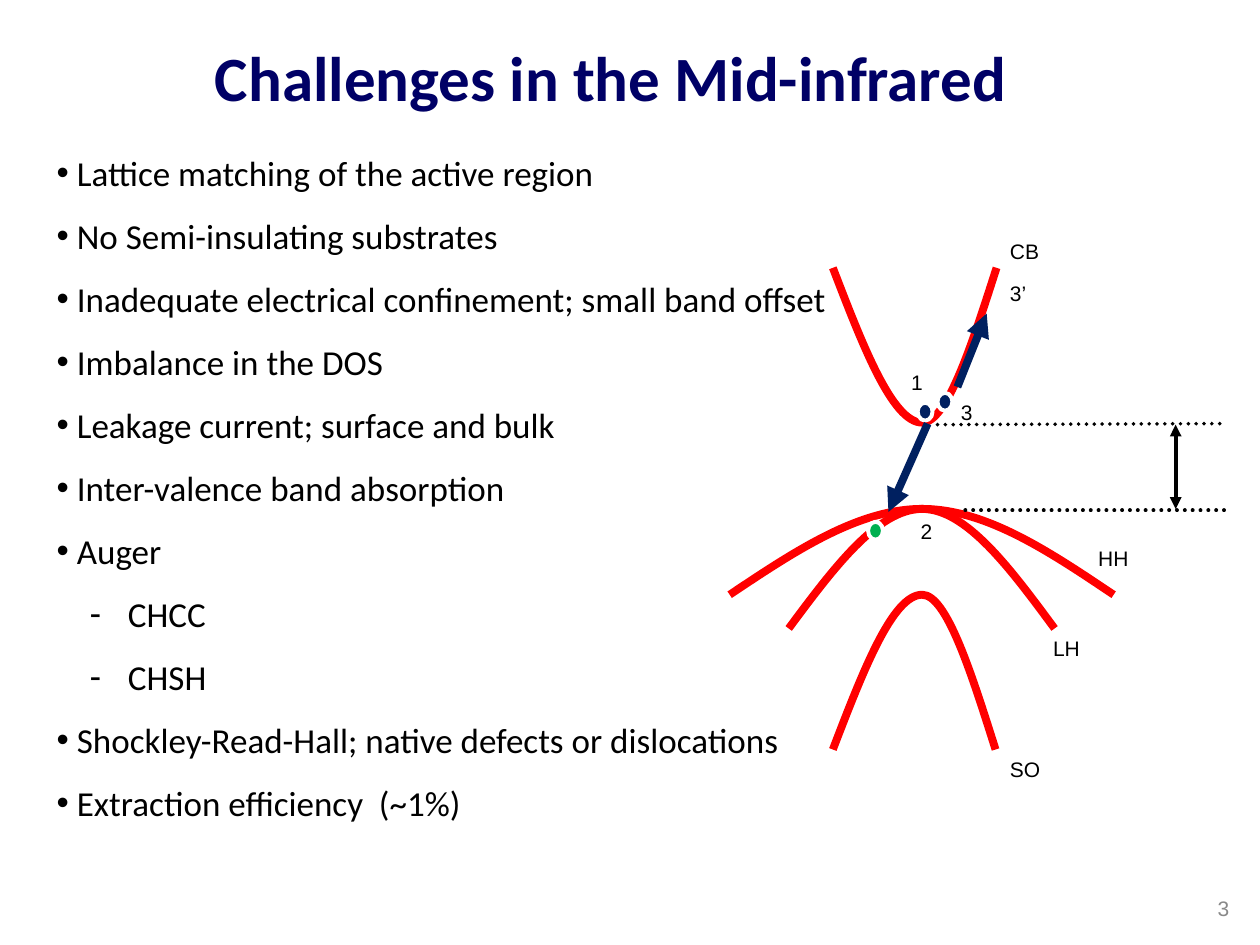
from typing import NamedTuple

from lxml import etree
from pptx import Presentation
from pptx import util as u
from pptx.dml.color import RGBColor
from pptx.enum import dml, shapes, text
from pptx.oxml.ns import qn


class Theme:
    navy = RGBColor(0, 0, 0x66)
    blue = RGBColor(0, 0x20, 0x60)
    red = RGBColor(0xFF, 0, 0)
    green = RGBColor(0, 0xB0, 0x50)
    black = RGBColor(0, 0, 0)
    gray = RGBColor(0x89, 0x89, 0x89)
    white = RGBColor(0xFF, 0xFF, 0xFF)
    head, body, small = u.Pt(36), u.Pt(20), u.Pt(12)
    thick, thin = u.Pt(4.5), u.Pt(2.25)
    main, label = "Calibri", "Arial"


# All lengths below are in centimetres
class Item(NamedTuple):
    words: str
    sub: bool = False


class Label(NamedTuple):
    words: str
    x: float
    y: float
    w: float = 1.5
    h: float = 1.04


class Band(NamedTuple):
    left: float
    right: float
    end: float   # height of both ends
    apex: float  # height of the turning point


class Dot(NamedTuple):
    x: float
    y: float
    color: RGBColor


class Line(NamedTuple):
    x1: float
    y1: float
    x2: float
    y2: float
    color: RGBColor = Theme.black
    width: int = Theme.thin
    dots: bool = False
    ends: tuple = ()


ITEMS = [
    Item("Lattice matching of the active region"),
    Item("No Semi-insulating substrates"),
    Item("Inadequate electrical confinement; small band offset"),
    Item("Imbalance in the DOS"),
    Item("Leakage current; surface and bulk"),
    Item("Inter-valence band absorption"),
    Item("Auger"),
    Item("CHCC", True),
    Item("CHSH", True),
    Item("Shockley-Read-Hall; native defects or dislocations"),
    Item("Extraction efficiency  (~1%)"),
]
LABELS = [
    Label("2", 18.31, 10.33, 1.12, 1.12), Label("1", 18.12, 7.32, 0.89, 0.69),
    Label("CB", 20.11, 4.69), Label("LH", 20.98, 12.69),
    Label("HH", 21.89, 10.87, 1.57), Label("SO", 20.11, 15.13),
    Label("3", 19.12, 7.92, 1.12, 1.12), Label("3’", 20.11, 5.54, 1.12, 1.12),
]
MID = 18.59  # shared axis of the bands
BANDS = [
    Band(16.79, 20.07, 15.11, 11.99),  # SO
    Band(16.79, 20.09, 5.4, 8.52),     # CB
    Band(14.71, 22.45, 11.99, 10.26),  # HH
    Band(15.9, 21.26, 12.67, 10.26),   # LH
]
DOTS = [
    Dot(17.5, 10.52, Theme.green),
    Dot(18.5, 8.12, Theme.blue),
    Dot(18.9, 7.92, Theme.blue),
]
LINES = [
    Line(18.7, 8.54, 17.91, 10.32, Theme.blue, Theme.thick, ends=("tailEnd",)),
    Line(18.9, 8.56, 24.69, 8.54, dots=True),
    Line(19.46, 10.29, 24.82, 10.29, dots=True),
    Line(23.7, 8.56, 23.7, 10.26, ends=("headEnd", "tailEnd")),
    Line(19.3, 7.8, 19.89, 6.32, Theme.blue, Theme.thick, ends=("tailEnd",)),
]


def style(font, name: str, size: int, color: RGBColor) -> None:
    font.name, font.size = name, size
    font.color.rgb = color


def add_box(slide, x: float, y: float, w: float, h: float):
    frame = slide.shapes.add_textbox(u.Cm(x), u.Cm(y), u.Cm(w), u.Cm(h)).text_frame
    frame.word_wrap = True
    return frame


def add_label(slide, label: Label, color: RGBColor = Theme.black):
    frame = add_box(slide, label.x, label.y, label.w, label.h)
    para = frame.paragraphs[0]
    para.text = label.words
    style(para.font, Theme.label, Theme.small, color)
    return frame


def add_item(para, item: Item) -> None:
    para.text = item.words
    para.space_after = u.Pt(12)
    para.level = int(item.sub)
    left, hang, mark = (1.44, 0.77, "-") if item.sub else (0.41, 0.41, "•")
    props = para._p.get_or_add_pPr()
    props.set("marL", str(u.Cm(left)))
    props.set("indent", str(-u.Cm(hang)))
    etree.SubElement(props, qn("a:buFont")).set("typeface", Theme.label)
    etree.SubElement(props, qn("a:buChar")).set("char", mark)
    style(para.font, Theme.main, Theme.body, Theme.black)


def half(band: Band, start: float) -> list:
    """End, two handles and apex of one arm, at equal steps across."""
    rows = (band.end, (band.end + band.apex) / 2, band.apex, band.apex)
    return [(u.Cm(start + (MID - start) * i / 3), u.Cm(y)) for i, y in enumerate(rows)]


def add_band(slide, band: Band) -> None:
    points = half(band, band.left) + half(band, band.right)[-2::-1]
    pen = slide.shapes.build_freeform(*points[0])
    pen.add_line_segments(points[1:], close=False)
    shape = pen.convert_to_shape()
    # Each three straight segments become one cubic
    steps = list(shape._element.iter(qn("a:lnTo")))
    for i in range(0, len(steps), 3):
        cubic = etree.Element(qn("a:cubicBezTo"))
        steps[i].addprevious(cubic)
        for step in steps[i:i + 3]:
            cubic.append(step[0])
            step.getparent().remove(step)
    shape.shadow.inherit = False
    shape.fill.background()
    shape.line.color.rgb = Theme.red
    shape.line.width = Theme.thick


def add_dot(slide, dot: Dot) -> None:
    shape = slide.shapes.add_shape(shapes.MSO_SHAPE.OVAL, u.Cm(dot.x), u.Cm(dot.y),
                                   u.Cm(0.3), u.Cm(0.36))
    shape.shadow.inherit = False
    shape.fill.solid()
    shape.fill.fore_color.rgb = dot.color
    shape.line.color.rgb = Theme.white
    shape.line.width = Theme.thin


def add_line(slide, line: Line) -> None:
    link = slide.shapes.add_connector(shapes.MSO_CONNECTOR.STRAIGHT, u.Cm(line.x1),
                                      u.Cm(line.y1), u.Cm(line.x2), u.Cm(line.y2))
    link.line.color.rgb = line.color
    link.line.width = line.width
    stroke = link._element.spPr.find(qn("a:ln"))
    if line.dots:
        link.line.dash_style = dml.MSO_LINE.ROUND_DOT  # saved as sysDot
        stroke.set("cap", "rnd")
    for end in line.ends:
        etree.SubElement(stroke, qn("a:" + end)).set("type", "triangle")
    etree.SubElement(link._element.spPr, qn("a:effectLst"))


def main() -> None:
    deck = Presentation()
    deck.slide_width, deck.slide_height = u.Cm(25.4), u.Cm(19.05)
    slide = deck.slides.add_slide(deck.slide_layouts[5])

    # Title, set a little left of centre
    title = slide.shapes.title
    title.left, title.top, title.width, title.height = map(u.Cm, (1.42, 0.64, 22.68, 1.8))
    frame = title.text_frame
    frame.text = "Challenges in the Mid-infrared"
    frame.vertical_anchor = text.MSO_ANCHOR.MIDDLE
    frame.margin_right = u.Cm(1.14)
    para = frame.paragraphs[0]
    para.alignment = text.PP_ALIGN.CENTER
    para.font.bold = True
    style(para.font, Theme.main, Theme.head, Theme.navy)

    # Band diagram
    for band in BANDS:
        add_band(slide, band)
    for dot in DOTS:
        add_dot(slide, dot)
    for line in LINES:
        add_line(slide, line)
    for label in LABELS:
        add_label(slide, label)

    # Bullet list
    frame = add_box(slide, 0.89, 2.92, 17.68, 13.94)
    frame.auto_size = text.MSO_AUTO_SIZE.SHAPE_TO_FIT_TEXT
    for i, item in enumerate(ITEMS):
        add_item(frame.add_paragraph() if i else frame.paragraphs[0], item)

    # Page number
    frame = add_label(slide, Label("3", 24.01, 17.79, 1.02, 1.02), Theme.gray)
    frame.vertical_anchor = text.MSO_ANCHOR.MIDDLE
    frame.paragraphs[0].alignment = text.PP_ALIGN.RIGHT

    deck.save("out.pptx")


if __name__ == "__main__":
    main()
